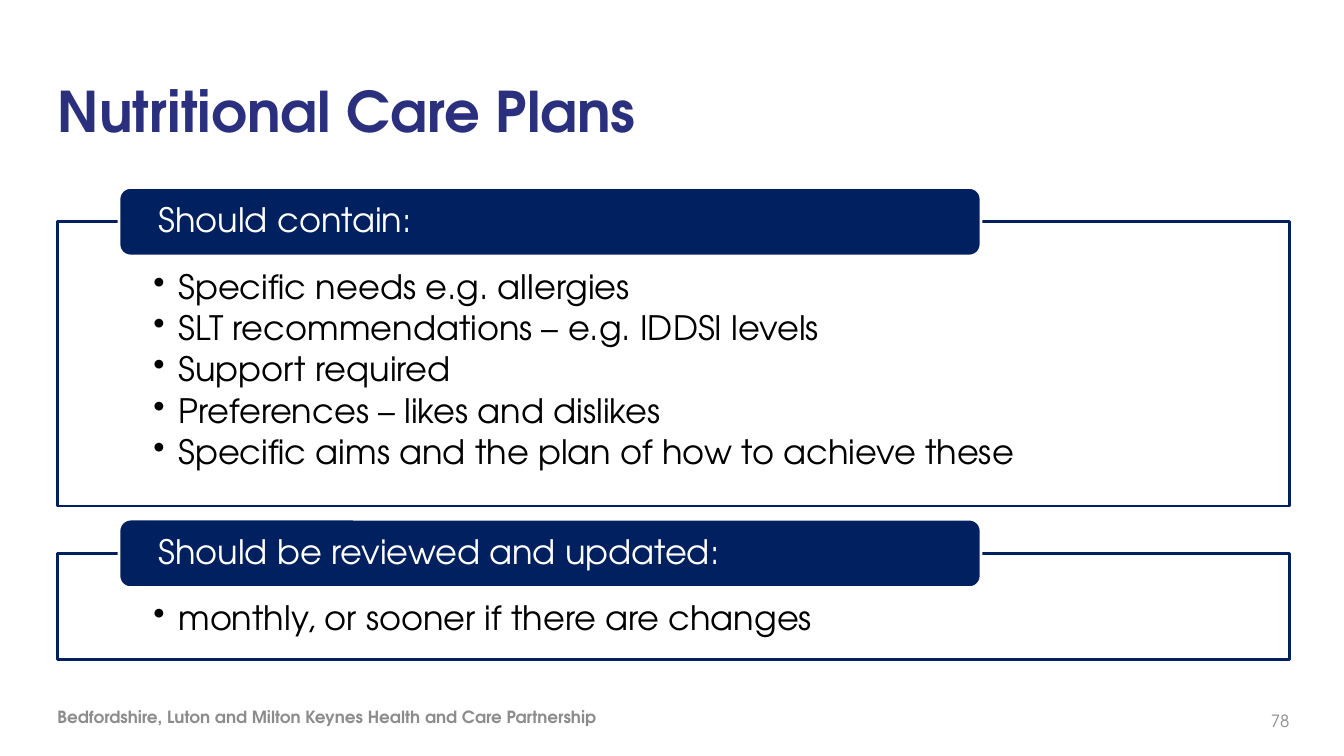
from dataclasses import dataclass

from lxml.etree import SubElement
from pptx import Presentation
from pptx.dml.color import RGBColor
from pptx.enum.shapes import MSO_SHAPE
from pptx.enum.text import MSO_ANCHOR, PP_ALIGN
from pptx.oxml.ns import qn
from pptx.util import Inches, Pt


@dataclass(frozen=True)
class Theme:
    face: str = "TeX Gyre Adventor"
    title: str = "2B307E"
    navy: str = "002060"
    white: str = "FFFFFF"
    black: str = "000000"
    grey: str = "8C8C8C"
    big: int = 40
    body: int = 24
    small: int = 12
    edge: int = 2


THEME = Theme()
LEFT, WIDTH = 0.57, 12.22
TAB_HIGH, TAB_RISE = 0.68, 0.34

PANELS = [
    (2.2, 2.82, "Should contain:", [
        "Specific needs e.g. allergies",
        "SLT recommendations – e.g. IDDSI levels",
        "Support required",
        "Preferences – likes and dislikes",
        "Specific aims and the plan of how to achieve these",
    ]),
    (5.49, 1.05, "Should be reviewed and updated:", [
        "monthly, or sooner if there are changes",
    ]),
]


def add_mark(para):
    """Give a paragraph a hanging bullet."""
    props = para._p.get_or_add_pPr()
    props.set("marL", str(Inches(0.25)))
    props.set("indent", str(-Inches(0.25)))
    SubElement(props, qn("a:buChar"), char="•")


def put_text(shape, lines, size, color, bold=False, align=PP_ALIGN.LEFT,
             anchor=MSO_ANCHOR.MIDDLE, inset=(0, 0, 0, 0),
             pitch=None, after=0, mark=False):
    """Fill a shape with one paragraph per line."""
    frame = shape.text_frame
    frame.word_wrap = True
    frame.vertical_anchor = anchor
    (frame.margin_left, frame.margin_top,
     frame.margin_right, frame.margin_bottom) = map(Inches, inset)
    for i, line in enumerate(lines):
        para = frame.paragraphs[0] if i == 0 else frame.add_paragraph()
        para.alignment = align
        para.space_after = Pt(after)
        if pitch:
            para.line_spacing = pitch
        if mark:
            add_mark(para)
        run = para.add_run()
        run.text = line
        font = run.font
        font.name, font.size, font.bold = THEME.face, Pt(size), bold
        font.color.rgb = RGBColor.from_string(color)


def add_label(slide, box, text, size, color, **form):
    shape = slide.shapes.add_textbox(*map(Inches, box))
    put_text(shape, [text], size, color, **form)


def add_block(slide, kind, box, fill, line):
    shape = slide.shapes.add_shape(kind, *map(Inches, box))
    shape.shadow.inherit = False
    shape.fill.solid()
    shape.fill.fore_color.rgb = RGBColor.from_string(fill)
    shape.line.color.rgb = RGBColor.from_string(line)
    shape.line.width = Pt(THEME.edge)
    return shape


def add_panel(slide, top, high, head, items):
    """Draw a framed list with a heading tab across its top edge."""
    frame = add_block(slide, MSO_SHAPE.RECTANGLE, (LEFT, top, WIDTH, high),
                      THEME.white, THEME.navy)
    put_text(frame, items, THEME.body, THEME.black, anchor=MSO_ANCHOR.TOP,
             inset=(0.95, 0.48, 0.95, 0.19), pitch=0.9, after=3.6, mark=True)
    tab = add_block(slide, MSO_SHAPE.ROUNDED_RECTANGLE,
                    (1.18, top - TAB_RISE, 8.55, TAB_HIGH),
                    THEME.navy, THEME.white)
    put_text(tab, [head], THEME.body, THEME.white,
             inset=(0.36, 0, 0.36, 0), pitch=0.9)


def main():
    deck = Presentation()
    deck.slide_width, deck.slide_height = Inches(13.33), Inches(7.5)
    slide = deck.slides.add_slide(deck.slide_layouts[6])

    # Title
    add_label(slide, (LEFT, 0.42, 9.64, 1.35), "Nutritional Care Plans",
              THEME.big, THEME.title, bold=True)

    # Panels
    for panel in PANELS:
        add_panel(slide, *panel)

    # Footer
    add_label(slide, (LEFT, 6.91, 8.1, 0.4),
              "Bedfordshire, Luton and Milton Keynes Health and Care Partnership",
              THEME.small, THEME.grey, bold=True, after=6)
    add_label(slide, (12.26, 6.95, 0.53, 0.4), "78",
              THEME.small, THEME.grey, align=PP_ALIGN.RIGHT, after=6)

    deck.save("out.pptx")


if __name__ == "__main__":
    main()
